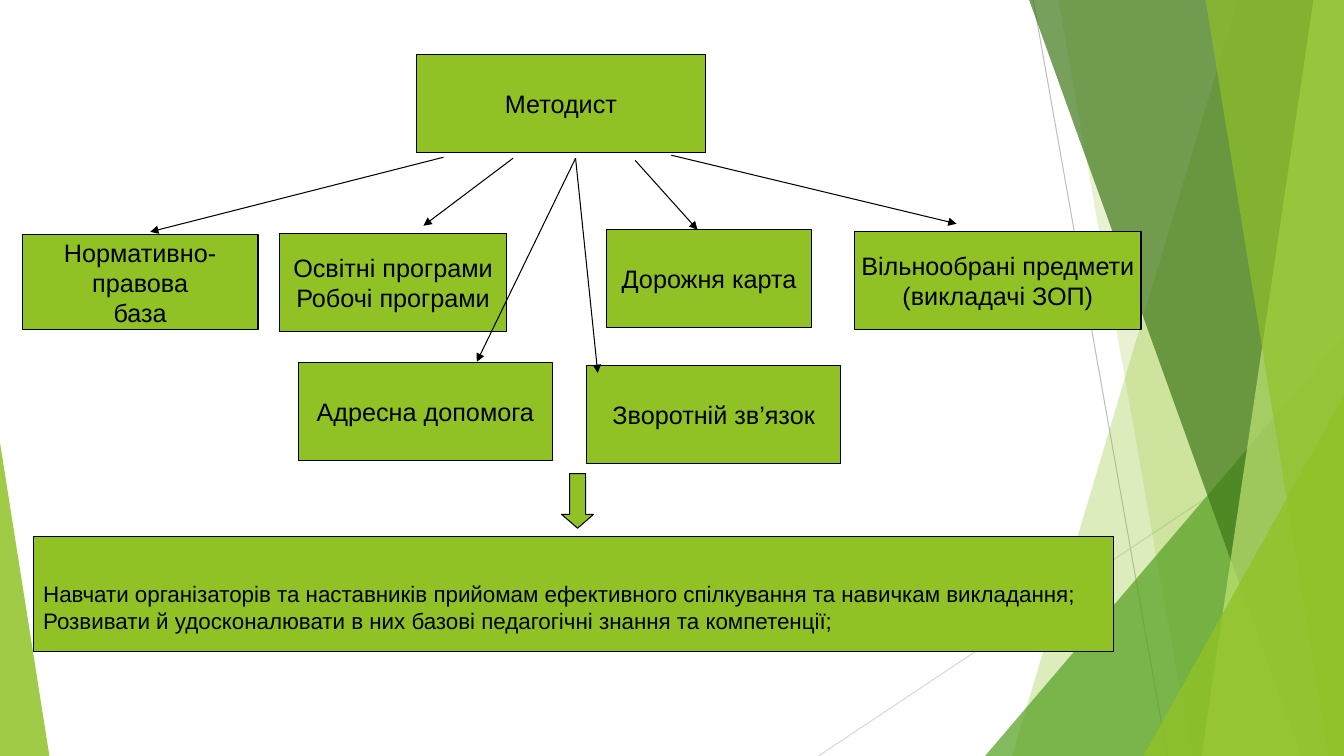
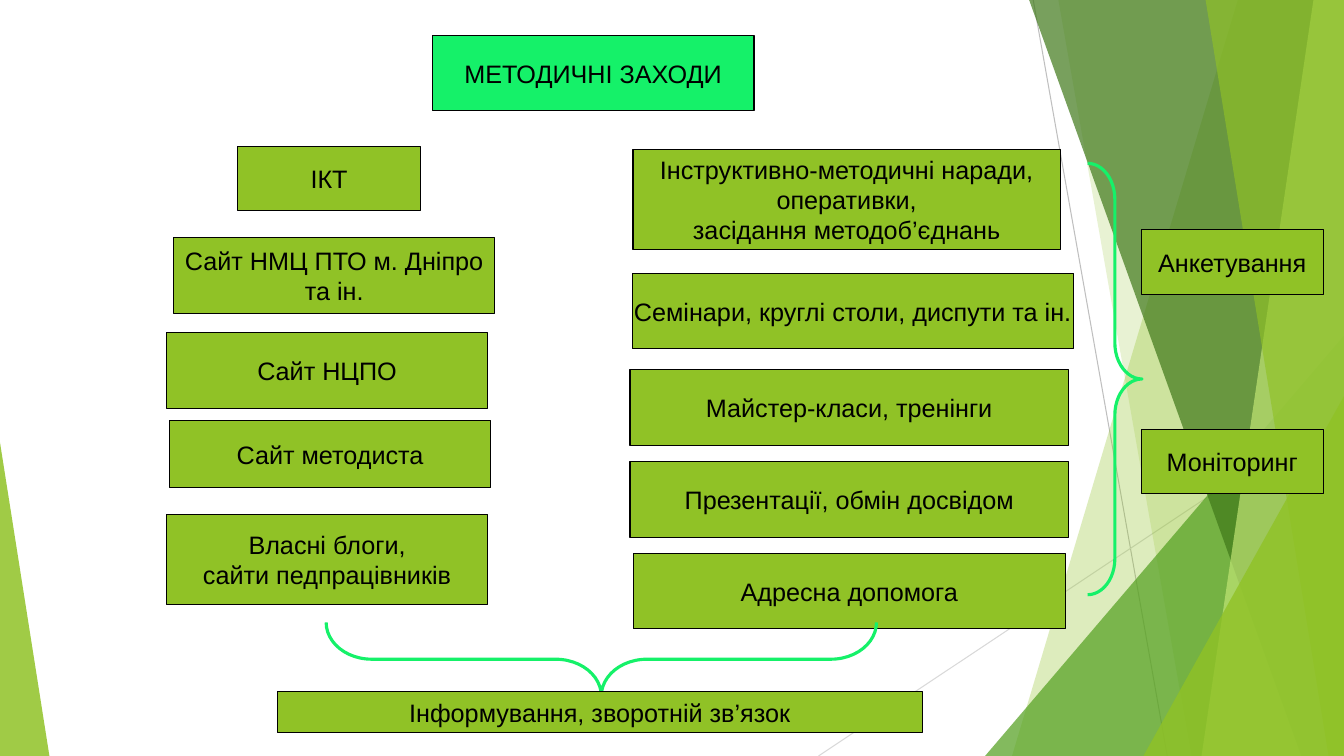
from dataclasses import dataclass

from lxml.etree import SubElement
from pptx import Presentation
from pptx.dml.color import RGBColor
from pptx.enum.shapes import MSO_CONNECTOR, MSO_SHAPE
from pptx.enum.text import MSO_ANCHOR, PP_ALIGN
from pptx.oxml.ns import qn
from pptx.util import Emu, Inches, Pt

# The slide is a grid of square cells, 133.33 columns by 75 rows.
COLUMNS, ROWS = 133.33, 75
CELL = Inches(0.1)


@dataclass(frozen=True)
class Theme:
    font: str = "Arial"
    label_size: int = 18
    note_size: int = 16
    hairline: float = 0.75
    brace_line: float = 2.25
    text: str = "000000"
    lime: str = "90C226"
    pale_lime: str = "C0E474"
    grass: str = "54A021"
    forest: str = "3F7819"
    accent: str = "15F169"
    grey: str = "BFBFBF"
    pale_grey: str = "D9D9D9"


THEME = Theme()


@dataclass(frozen=True)
class Box:
    left: float
    top: float
    width: float
    height: float

    def inside(self, left, top, width, height):
        """Return a box whose position is counted from this one's corner."""
        return Box(self.left + left, self.top + top, width, height)

    def point(self, column, row):
        return self.left + column, self.top + row

    def turned(self):
        """Return the frame that fills this box after a quarter turn."""
        shift = (self.width - self.height) / 2
        return self.inside(shift, -shift, self.height, self.width)


SLIDE = Box(0, 0, COLUMNS, ROWS)


def cells(*counts):
    return [Emu(round(count * CELL)) for count in counts]


def color(name):
    return RGBColor.from_string(name)


def set_line(shape, line_color, width):
    shape.line.color.rgb = color(line_color)
    shape.line.width = Pt(width)


def set_fill(shape, fill_color, opacity=100):
    shape.fill.solid()
    shape.fill.fore_color.rgb = color(fill_color)
    if opacity < 100:
        fill = shape.element.spPr.find(qn("a:solidFill"))
        SubElement(fill[0], qn("a:alpha"), val=str(opacity * 1000))


def add_preset(slide, kind, box, adjustments=()):
    frame = cells(box.left, box.top, box.width, box.height)
    shape = slide.shapes.add_shape(kind, *frame)
    shape.shadow.inherit = False
    for index, value in enumerate(adjustments):
        shape.adjustments[index] = value
    return shape


def add_line(slide, start, end, line_color=THEME.text, arrow=False):
    connector = slide.shapes.add_connector(
        MSO_CONNECTOR.STRAIGHT, *cells(*start, *end))
    set_line(connector, line_color, THEME.hairline)
    properties = connector.element.spPr
    if arrow:
        SubElement(properties.find(qn("a:ln")), qn("a:tailEnd"), type="triangle")
    SubElement(properties, qn("a:effectLst"))
    return connector


def add_label(slide, box, *lines, fill=THEME.lime, size=THEME.label_size,
              align=PP_ALIGN.CENTER, wrap=False):
    """Add an outlined rectangle with one paragraph for each line."""
    shape = add_preset(slide, MSO_SHAPE.RECTANGLE, box)
    set_fill(shape, fill)
    set_line(shape, THEME.text, THEME.hairline)
    frame = shape.text_frame
    frame.word_wrap = wrap
    frame.vertical_anchor = MSO_ANCHOR.MIDDLE
    frame.text = "\n".join(lines)
    for paragraph in frame.paragraphs:
        paragraph.alignment = align
        paragraph.font.name = THEME.font
        paragraph.font.size = Pt(size)
        paragraph.font.color.rgb = color(THEME.text)
    return shape


def add_brace(slide, box, curve, downward=False):
    """Add a brace that fills the box and points right or down."""
    frame = box.turned() if downward else box
    brace = add_preset(slide, MSO_SHAPE.RIGHT_BRACE, frame, (curve, 0.5))
    brace.rotation = 90 if downward else 0
    brace.fill.background()
    set_line(brace, THEME.accent, THEME.brace_line)


def add_facet(slide, box, top_left, bottom_left, fill, opacity):
    """Add a translucent band from a slanted left edge to the box's right side."""
    right, bottom = box.point(box.width, box.height)
    corners = [(top_left, box.top), (right, box.top),
               (right, bottom), (bottom_left, bottom)]
    start, *others = [cells(*corner) for corner in corners]
    builder = slide.shapes.build_freeform(*start)
    builder.add_line_segments(others, close=True)
    shape = builder.convert_to_shape()
    shape.shadow.inherit = False
    set_fill(shape, fill, opacity)
    shape.line.fill.background()
    return shape


def add_wedge(slide, box, apex, fill, opacity):
    """Add a translucent right triangle, its apex at a share of the width."""
    shape = add_preset(slide, MSO_SHAPE.ISOSCELES_TRIANGLE, box, (apex,))
    set_fill(shape, fill, opacity)
    shape.line.fill.background()
    return shape


def draw_backdrop(slide, box):
    right, bottom = box.point(box.width, box.height)

    def corner_wedge(width, height, fill, opacity):
        corner = Box(right - width, bottom - height, width, height)
        return add_wedge(slide, corner, 1, fill, opacity)

    return [
        add_line(slide, (102.5, box.top), (115.8, bottom), THEME.grey),
        add_line(slide, (right, 40.3), (81.2, bottom), THEME.pale_grey),
        add_facet(slide, box, 122.8, 100.4, THEME.lime, 30),
        add_facet(slide, box, 105, 118.2, THEME.lime, 20),
        corner_wedge(35.6, 41.7, THEME.grass, 72),
        add_facet(slide, box, 102.1, 129.1, THEME.forest, 70),
        add_facet(slide, box, 130.3, 119.2, THEME.pale_lime, 70),
        add_facet(slide, box, 119.6, 131.8, THEME.lime, 65),
        corner_wedge(19.9, 35.7, THEME.lime, 80),
        add_wedge(slide, Box(box.left, bottom - 31.1, 4.9, 31.1), 0, THEME.lime, 85),
    ]


def share_backdrop(slide):
    """Draw the backdrop once and hand it to the layout that slides share."""
    layout = slide.slide_layout
    for placeholder in list(layout.placeholders):
        layout.shapes.element.remove(placeholder.element)
    for shape in draw_backdrop(slide, SLIDE):
        layout.shapes.element.append(shape.element)


def draw_labels(slide, box, labels):
    for place, *lines in labels:
        add_label(slide, box.inside(*place), *lines)


def draw_duties(slide, box):
    draw_labels(slide, box, [
        ((39.1, 0, 28.7, 9.7), "Методист"),
        ((0, 17.9, 23.4, 9.4), "Нормативно-", "правова", "база"),
        ((25.5, 17.8, 22.6, 9.7), "Освітні програми", "Робочі програми"),
        ((58, 17.4, 20.3, 9.7), "Дорожня карта"),
        ((82.6, 17.6, 28.4, 9.7), "Вільнообрані предмети", "(викладачі ЗОП)"),
        ((27.4, 30.6, 25.2, 9.7), "Адресна допомога"),
        ((56, 30.9, 25.2, 9.7), "Зворотній зв’язок"),
    ])
    hub = (54.9, 10.3)
    arrows = [
        ((41.8, 10.2), (12.7, 17.6)),
        ((48.7, 10.3), (39.8, 17)),
        (hub, (45.1, 30.5)),
        (hub, (57.1, 31.6)),
        ((60.8, 10.5), (67, 17.4)),
        ((64.4, 10), (92.7, 16.8)),
    ]
    for start, end in arrows:
        add_line(slide, box.point(*start), box.point(*end), arrow=True)


def draw_goal(slide, box):
    arrow = add_preset(slide, MSO_SHAPE.DOWN_ARROW,
                       box.inside(52.4, 0, 3.2, 5.4), (0.5, 0.43))
    set_fill(arrow, THEME.lime)
    set_line(arrow, THEME.text, THEME.hairline)
    goal = add_label(
        slide, box.inside(0, 6.2, box.width, 11.4),
        "Навчати організаторів та наставників прийомам ефективного"
        " спілкування та навичкам викладання;",
        "Розвивати й удосконалювати в них базові педагогічні знання"
        " та компетенції;",
        size=THEME.note_size, align=PP_ALIGN.LEFT, wrap=True)
    goal.text_frame.margin_top = Inches(0.32)


def draw_online_measures(slide, box):
    draw_labels(slide, box, [
        ((7.1, 0, 18.1, 6.4), "ІКТ"),
        ((0.7, 9.1, 31.9, 7.5), "Сайт НМЦ ПТО м. Дніпро", "та ін."),
        ((0, 18.5, 31.9, 7.5), "Сайт НЦПО"),
        ((0.3, 27.2, 31.9, 6.7), "Сайт методиста"),
        ((0, 36.5, 31.9, 9), "Власні блоги,", "сайти педпрацівників"),
    ])


def draw_live_measures(slide, box):
    draw_labels(slide, box, [
        ((0.3, 0, 42.4, 10), "Інструктивно-методичні наради,", "оперативки,",
         "засідання методоб’єднань"),
        ((0.2, 12.3, 43.8, 7.5), "Семінари, круглі столи, диспути та ін."),
        ((0, 21.9, 43.5, 7.5), "Майстер-класи, тренінги"),
        ((0, 31, 43.5, 7.5), "Презентації, обмін досвідом"),
        ((0.3, 40.1, 42.9, 7.5), "Адресна допомога"),
    ])


def draw_checks(slide, box):
    add_brace(slide, box.inside(0, 0, 5.4, box.height), 0.66)
    draw_labels(slide, box, [
        ((5.3, 6.6, 18.1, 6.4), "Анкетування"),
        ((5.3, 26.4, 18.1, 6.4), "Моніторинг"),
    ])


def draw_feedback(slide, box):
    add_brace(slide, box.inside(4.85, 0, 54.6, 7.3), 0.62, downward=True)
    add_label(slide, box.inside(0, 6.85, box.width, 4.1),
              "Інформування, зворотній зв’язок")


def draw_methodist_slide(slide):
    draw_duties(slide, Box(2.2, 5.4, 111, 40.6))
    draw_goal(slide, Box(3.3, 47, 107.2, 17.6))


def draw_measures_slide(slide):
    add_label(slide, Box(42.9, 3.5, 31.9, 7.5), "МЕТОДИЧНІ ЗАХОДИ",
              fill=THEME.accent)
    draw_online_measures(slide, Box(16.5, 14.5, 32.6, 45.5))
    draw_live_measures(slide, Box(62.5, 14.8, 44, 47.6))
    draw_checks(slide, Box(107.9, 16.2, 23.4, 42.8))
    draw_feedback(slide, Box(27.5, 61.75, 64, 10.95))


def main():
    presentation = Presentation()
    presentation.slide_width, presentation.slide_height = cells(COLUMNS, ROWS)
    blank_layout = presentation.slide_layouts[6]
    methodist, measures = [
        presentation.slides.add_slide(blank_layout) for _ in range(2)]
    share_backdrop(methodist)
    draw_methodist_slide(methodist)
    draw_measures_slide(measures)
    presentation.save("out.pptx")


if __name__ == "__main__":
    main()
